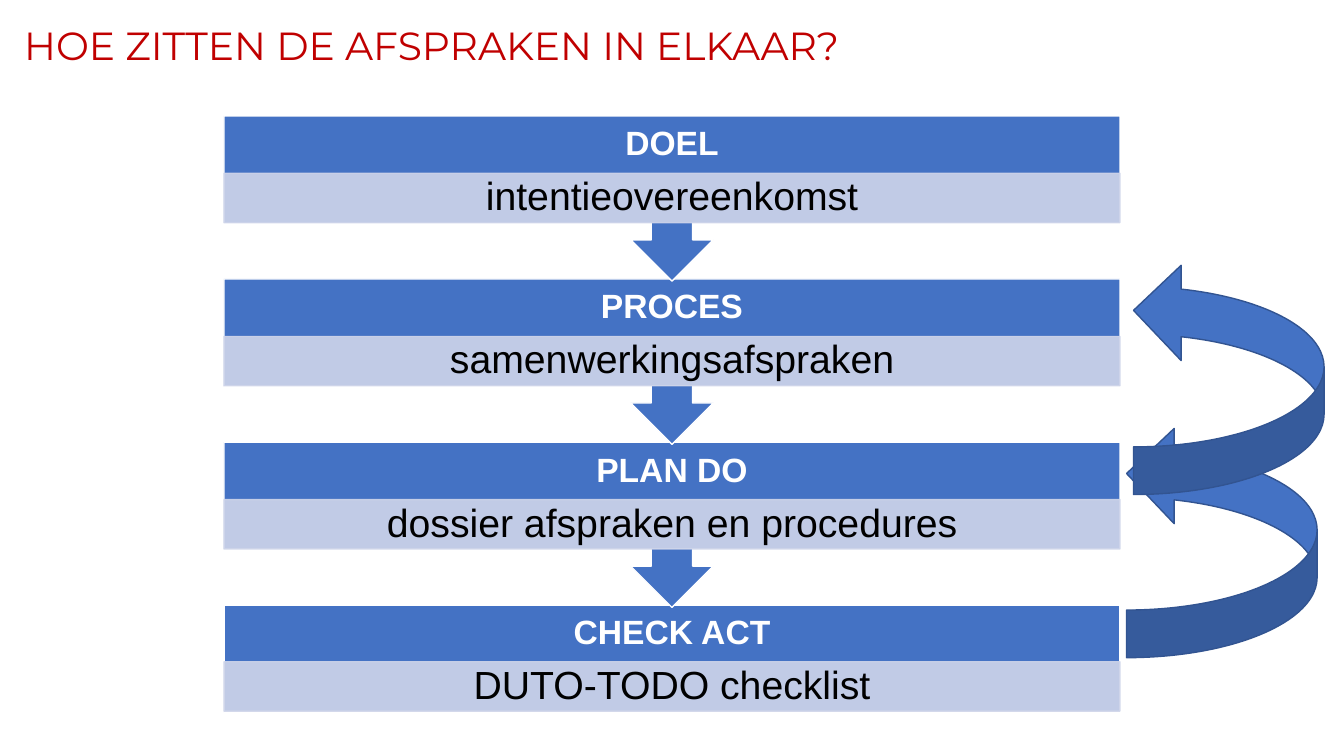
from dataclasses import dataclass
from lxml.etree import SubElement
from pptx import Presentation
from pptx.dml.color import RGBColor as Rgb
from pptx.enum.shapes import MSO_SHAPE as Kind
from pptx.enum.text import MSO_ANCHOR as Anchor, PP_ALIGN as Align
from pptx.oxml.ns import qn
from pptx.util import Inches, Pt


@dataclass(frozen=True)
class Theme:
    blue: str = "4472C4"
    edge: str = "325491"
    pale: str = "CFD5EA"
    white: str = "FFFFFF"
    black: str = "000000"
    red: str = "C00000"
    font: str = "Arial"
    head: str = "Montserrat"
    big: int = 28
    mid: int = 24
    cols: int = 60
    rows: int = 100


def write(frame, text, size, color, font, bold=False, align=Align.CENTER,
          anchor=Anchor.MIDDLE, pad=(0.1, 0.05, 0.1, 0.05)):
    """Put one formatted line in a frame; pad is left, top, right, bottom."""
    frame.word_wrap = True
    frame.vertical_anchor = anchor
    (frame.margin_left, frame.margin_top,
     frame.margin_right, frame.margin_bottom) = map(Inches, pad)
    para = frame.paragraphs[0]
    para.alignment = align
    para.line_spacing = 0.9
    run = para.add_run()
    run.text = text
    run.font.name, run.font.size, run.font.bold = font, Pt(size), bold
    run.font.color.rgb = Rgb.from_string(color)


class Page:
    def __init__(self, deck, theme):
        self.theme = theme
        self.slide = deck.slides.add_slide(deck.slide_layouts[0])
        self.col = deck.slide_width / theme.cols
        self.row = deck.slide_height / theme.rows

    def box(self, x, y, w, h):
        return (round(x * self.col), round(y * self.row),
                round(w * self.col), round(h * self.row))

    def title(self, text, *place):
        head, sub = self.slide.placeholders
        sub.element.getparent().remove(sub.element)
        head.left, head.top, head.width, head.height = self.box(*place)
        write(head.text_frame, text, self.theme.big, self.theme.red,
              self.theme.head, align=Align.LEFT, anchor=Anchor.BOTTOM)

    def shape(self, kind, *place, fill, line, alpha=None, turn=0):
        item = self.slide.shapes.add_shape(kind, *self.box(*place))
        item.shadow.inherit = False
        item.rotation = turn
        item.fill.solid()
        item.fill.fore_color.rgb = Rgb.from_string(fill)
        item.line.color.rgb = Rgb.from_string(line)
        item.line.width = Pt(1)
        if alpha:
            for tint in item.element.spPr.iter(qn("a:srgbClr")):
                SubElement(tint, qn("a:alpha"), val=str(alpha * 1000))
        return item

    def step(self, name, note, x, y, w, last):
        t = self.theme
        kind, high = ((Kind.RECTANGLE, 14.13) if last
                      else (Kind.DOWN_ARROW_CALLOUT, 21.87))
        block = self.shape(kind, x, y, w, high, fill=t.blue, line=t.white)
        write(block.text_frame, name, t.mid, t.white, t.font, bold=True,
              pad=(0.19, 0, 0.19, 0.49))
        band = self.shape(Kind.RECTANGLE, x, y + (7.47 if last else 7.6), w, 6.53,
                          fill=t.pale, line=t.pale, alpha=90)
        write(band.text_frame, note, t.big, t.black, t.font,
              pad=(0.22, 0.04, 0.22, 0.04))

    def loop(self, x, y):
        self.shape(Kind.CURVED_UP_ARROW, x, y, 10.35, 25.2,
                   fill=self.theme.blue, line=self.theme.edge, turn=270)


STEPS = [
    ("DOEL", "intentieovereenkomst"),
    ("PROCES", "samenwerkingsafspraken"),
    ("PLAN DO", "dossier afspraken en procedures"),
    ("CHECK ACT", "DUTO-TODO checklist"),
]
TOP, PITCH = 15.33, 21.58


def main():
    deck = Presentation()
    deck.slide_width, deck.slide_height = Inches(13.33), Inches(7.5)
    page = Page(deck, Theme())
    page.title("HOE ZITTEN DE AFSPRAKEN IN ELKAAR?", 0.63, 1.73, 58.28, 8)

    # Steps, lowest first so that each arrow tip lies on the next block
    final = len(STEPS) - 1
    for i in range(final, -1, -1):
        page.step(*STEPS[i], 10, TOP + i * PITCH, 40, last=i == final)

    # Loops back to the step before
    for x, i in ((49.37, 2), (49.68, 1)):
        page.loop(x, TOP + i * PITCH + 0.57)

    deck.save("out.pptx")


if __name__ == "__main__":
    main()
